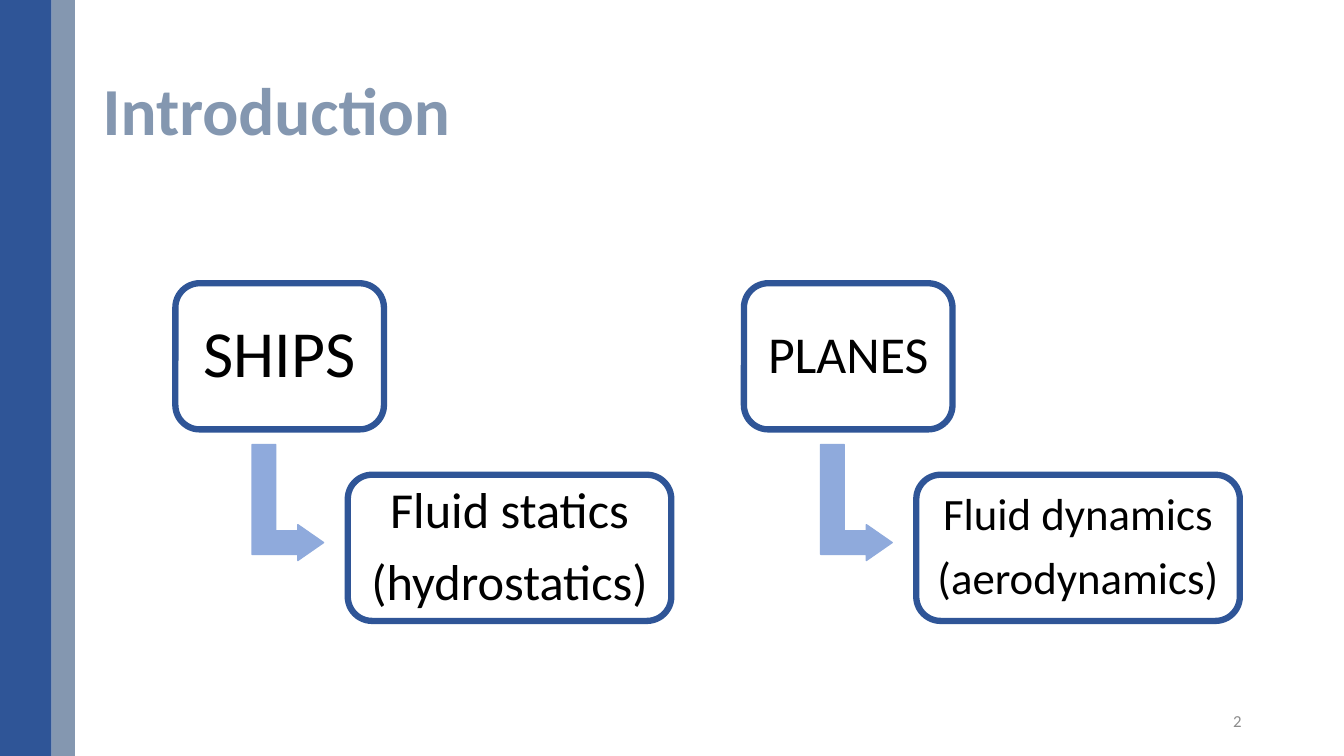
from dataclasses import dataclass

from pptx import Presentation
from pptx.dml.color import RGBColor
from pptx.enum.shapes import MSO_SHAPE
from pptx.enum.text import MSO_ANCHOR, PP_ALIGN
from pptx.util import Pt

RECT = MSO_SHAPE.RECTANGLE
ROUNDED = MSO_SHAPE.ROUNDED_RECTANGLE
BENT_ARROW = MSO_SHAPE.BENT_UP_ARROW
MIDDLE = MSO_ANCHOR.MIDDLE
LEFT, CENTER, RIGHT = PP_ALIGN.LEFT, PP_ALIGN.CENTER, PP_ALIGN.RIGHT

COLORS = {
    "navy": "2F5597",
    "slate": "8497B0",
    "arrow": "8FAADC",
    "text": "000000",
    "number": "8C8C8C",
}
FONT = "Calibri"
FIRST_BRANCH_LEFT, BRANCH_PITCH = 125.3, 406.1
BOX_HEIGHT = 104.4


@dataclass
class Label:
    lines: list[str]
    size: float
    inset: float


@dataclass
class Branch:
    vehicle: Label
    field: Label


BRANCHES = [
    Branch(Label(["SHIPS"], 47, 14.4),
           Label(["Fluid statics", "(hydrostatics)"], 36, 10.8)),
    Branch(Label(["PLANES"], 37, 10.8),
           Label(["Fluid dynamics", "(aerodynamics)"], 32, 9.4)),
]


def color(name: str) -> RGBColor:
    return RGBColor.from_string(COLORS[name])


def write(frame, lines: list[str], size: float, color_name: str, align,
          bold: bool = False, spacing: float = 0.9) -> None:
    frame.word_wrap = True
    frame.vertical_anchor = MIDDLE
    font_format = {"name": FONT, "size": Pt(size), "bold": bold}
    for index, line in enumerate(lines):
        paragraph = frame.paragraphs[0] if index == 0 else frame.add_paragraph()
        paragraph.alignment = align
        paragraph.line_spacing = spacing
        if index < len(lines) - 1:
            paragraph.space_after = Pt(0.35 * size)
        run = paragraph.add_run()
        run.text = line
        for key, value in font_format.items():
            setattr(run.font, key, value)
        run.font.color.rgb = color(color_name)


def add_shape(slide, kind, left: float, top: float, width: float, height: float,
              fill: str | None = None, line: str | None = None,
              line_width: float = 1):
    shape = slide.shapes.add_shape(kind, Pt(left), Pt(top), Pt(width), Pt(height))
    shape.shadow.inherit = False
    if fill:
        shape.fill.solid()
        shape.fill.fore_color.rgb = color(fill)
    else:
        shape.fill.background()
    if line:
        shape.line.color.rgb = color(line)
        shape.line.width = Pt(line_width)
    else:
        shape.line.fill.background()
    return shape


def add_box(slide, label: Label, left: float, top: float, width: float) -> None:
    box = add_shape(slide, ROUNDED, left, top, width, BOX_HEIGHT,
                    line="navy", line_width=4.5)
    frame = box.text_frame
    for side in ("left", "top", "right", "bottom"):
        setattr(frame, f"margin_{side}", Pt(label.inset))
    write(frame, label.lines, label.size, "text", CENTER)


def add_branch(slide, branch: Branch, left: float) -> None:
    arrow = add_shape(slide, BENT_ARROW, left + 38.9, 333.4, 82.8, 51.1,
                      fill="arrow", line="arrow")
    arrow.rotation = 90
    for index, value in enumerate((0.33, 0.25, 0.36)):
        arrow.adjustments[index] = value
    add_box(slide, branch.vehicle, left, 202.3, 149)
    add_box(slide, branch.field, left + 123.1, 339.1, 231.1)


def main() -> None:
    prs = Presentation()
    prs.slide_width, prs.slide_height = Pt(960), Pt(540)
    slide = prs.slides.add_slide(prs.slide_layouts[5])

    # Title
    title = slide.shapes.title
    title_place = {"left": 66.2, "top": 28.8, "width": 828, "height": 104.4}
    for key, value in title_place.items():
        setattr(title, key, Pt(value))
    write(title.text_frame, ["Introduction"], 48, "slate", LEFT, bold=True)

    # Slide number
    number = slide.shapes.add_textbox(Pt(678), Pt(500.5), Pt(216), Pt(28.8))
    write(number.text_frame, ["2"], 12, "number", RIGHT, spacing=1.0)

    # Side bands
    add_shape(slide, RECT, 0, 0, 36.9, 540, fill="navy")
    add_shape(slide, RECT, 36.9, 0, 16.6, 540, fill="slate")

    # Vehicles and their fields of study
    for index, branch in enumerate(BRANCHES):
        add_branch(slide, branch, FIRST_BRANCH_LEFT + index * BRANCH_PITCH)

    prs.save("out.pptx")


if __name__ == "__main__":
    main()
